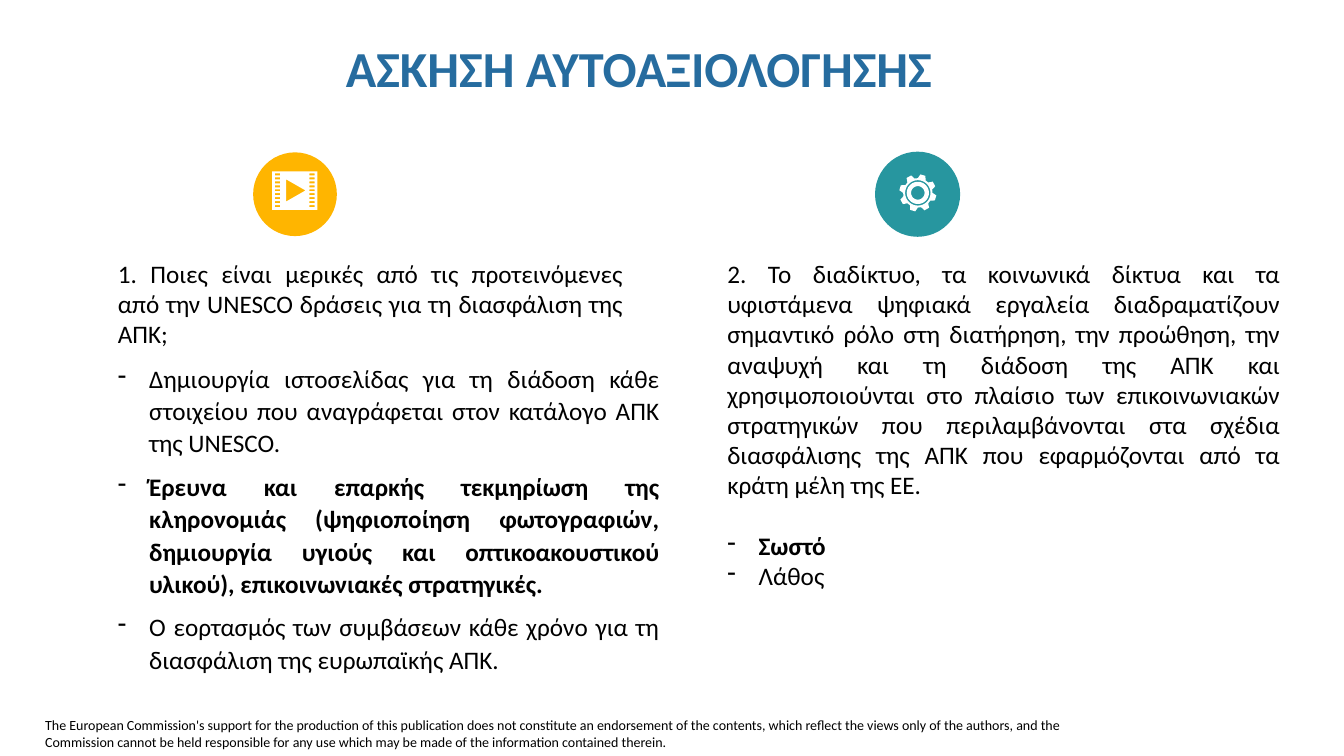
from math import cos, radians, sin

from lxml import etree
from pptx import Presentation
from pptx.dml.color import RGBColor
from pptx.enum.shapes import MSO_SHAPE
from pptx.enum.text import MSO_ANCHOR, MSO_AUTO_SIZE, PP_ALIGN
from pptx.oxml.ns import qn
from pptx.util import Cm, Pt

LEFT, JUSTIFY = PP_ALIGN.LEFT, PP_ALIGN.JUSTIFY
TOP, MIDDLE = MSO_ANCHOR.TOP, MSO_ANCHOR.MIDDLE
NO_FIT, GROW = MSO_AUTO_SIZE.NONE, MSO_AUTO_SIZE.SHAPE_TO_FIT_TEXT
ELLIPSE = MSO_SHAPE.OVAL
FONT = "Calibri"
COLORS = {
    "title": "266C9F",
    "text": "000000",
    "film": "FFB500",
    "gear": "27969F",
    "icon": "FFFFFF",
}
INDENT = 0.79
LEFT_X, RIGHT_X = 2.72, 18.08
QUESTION_Y, ICON_Y, ICON_SIZE = 6.38, 3.84, 2.11


def rgb(name):
    return RGBColor.from_string(COLORS[name])


def add_text(p, text, size=18, color="text", bold=False, align=LEFT,
             bullet=None, spacing=None, after=None):
    if bullet:
        pPr = p._p.get_or_add_pPr()
        pPr.set("marL", str(Cm(INDENT)))
        pPr.set("indent", str(-Cm(INDENT)))
        etree.SubElement(pPr, qn("a:buChar")).set("char", bullet)
    p.alignment = align
    if spacing:
        p.line_spacing = spacing
    if after:
        p.space_after = Pt(after)
    r = p.add_run()
    r.text = text
    r.font.name, r.font.size, r.font.bold = FONT, Pt(size), bold
    r.font.color.rgb = rgb(color)


def box(x, y, w, h):
    return [(x, y), (x + w, y), (x + w, y + h), (x, y + h)]


def polar(cx, cy, radius, angle):
    return cx + radius * cos(radians(angle)), cy + radius * sin(radians(angle))


def ring(cx, cy, radius):
    return [polar(cx, cy, radius, angle) for angle in range(0, 360, 10)]


def film_outlines():
    holes = [box(x, 4.37 + 0.1 * row, 0.13, 0.05)
             for row in range(9) for x in (6.93, 7.8)]
    play = [(7.21, 4.52), (7.21, 5.08), (7.7, 4.8)]
    return [box(6.86, 4.32, 1.14, 0.97), play, *holes]


def gear_outlines(cx=23.13, cy=4.86, teeth=8):
    profile = [(0.37, -16), (0.47, -8), (0.47, 8), (0.37, 16)]
    rim = [polar(cx, cy, radius, tooth * 360 / teeth - 74 + offset)
           for tooth in range(teeth) for radius, offset in profile]
    return [rim, *(ring(cx, cy, radius) for radius in (0.32, 0.28, 0.17))]


class SlideBuilder:
    def __init__(self, prs):
        self.s = prs.slides.add_slide(prs.slide_layouts[5])

    def fill_frame(self, sp, paras, anchor=TOP, fit=NO_FIT, **style):
        tf = sp.text_frame
        tf.word_wrap, tf.auto_size, tf.vertical_anchor = True, fit, anchor
        for i, (text, bold) in enumerate(paras):
            p = tf.add_paragraph() if i else tf.paragraphs[0]
            add_text(p, text, bold=bold, **style)

    def title(self, text, x, y, w, h):
        sp = self.s.shapes.title
        sp.left, sp.top, sp.width, sp.height = Cm(x), Cm(y), Cm(w), Cm(h)
        self.fill_frame(sp, [(text, True)], anchor=MIDDLE,
                        size=36, color="title", spacing=0.9)

    def text(self, paras, x, y, w, h, **style):
        sp = self.s.shapes.add_textbox(Cm(x), Cm(y), Cm(w), Cm(h))
        self.fill_frame(sp, paras, **style)

    def paint(self, sp, color):
        sp.shadow.inherit = False
        sp.fill.solid()
        sp.fill.fore_color.rgb = rgb(color)
        sp.line.fill.background()

    def disc(self, x, color):
        sp = self.s.shapes.add_shape(
            ELLIPSE, Cm(x), Cm(ICON_Y), Cm(ICON_SIZE), Cm(ICON_SIZE))
        self.paint(sp, color)
        return sp

    def icon(self, outlines):
        paths = [[(Cm(x), Cm(y)) for x, y in points] for points in outlines]
        builder = self.s.shapes.build_freeform(*paths[0][0])
        for i, points in enumerate(paths):
            if i:
                builder.move_to(*points[0])
            builder.add_line_segments(points[1:], close=True)
        self.paint(builder.convert_to_shape(), "icon")


def main():
    prs = Presentation()
    prs.slide_width, prs.slide_height = Cm(33.87), Cm(19.05)
    slide = SlideBuilder(prs)

    slide.title("ΑΣΚΗΣΗ ΑΥΤΟΑΞΙΟΛΟΓΗΣΗΣ", 8.46, 0.79, 24.05, 2.01)
    slide.text([(
        "The European Commission's support for the production of this "
        "publication does not constitute an endorsement of the contents, "
        "which reflect the views only of the authors, and the Commission "
        "cannot be held responsible for any use which may be made of the "
        "information contained therein.", False)],
        0.89, 17.93, 26.57, 1.12, fit=GROW, size=10)

    slide.text([(
        "1. Ποιες είναι μερικές από τις προτεινόμενες από την UNESCO "
        "δράσεις για τη διασφάλιση της ΑΠΚ;", False)],
        LEFT_X, QUESTION_Y, 13.23, 1.32, align=JUSTIFY)
    slide.text([
        ("Δημιουργία ιστοσελίδας για τη διάδοση κάθε στοιχείου που "
         "αναγράφεται στον κατάλογο ΑΠΚ της UNESCO.", False),
        ("Έρευνα και επαρκής τεκμηρίωση της κληρονομιάς (ψηφιοποίηση "
         "φωτογραφιών, δημιουργία υγιούς και οπτικοακουστικού υλικού), "
         "επικοινωνιακές στρατηγικές.", True),
        ("Ο εορτασμός των συμβάσεων κάθε χρόνο για τη διασφάλιση της "
         "ευρωπαϊκής ΑΠΚ.", False)],
        LEFT_X, 8.97, 14.15, 2.31,
        align=JUSTIFY, bullet="-", spacing=1.07, after=8)

    slide.text([(
        "2. Το διαδίκτυο, τα κοινωνικά δίκτυα και τα υφιστάμενα ψηφιακά "
        "εργαλεία διαδραματίζουν σημαντικό ρόλο στη διατήρηση, την προώθηση, "
        "την αναψυχή και τη διάδοση της ΑΠΚ και χρησιμοποιούνται στο πλαίσιο "
        "των επικοινωνιακών στρατηγικών που περιλαμβάνονται στα σχέδια "
        "διασφάλισης της ΑΠΚ που εφαρμόζονται από τα κράτη μέλη της ΕΕ.",
        False)],
        RIGHT_X, QUESTION_Y, 14.43, 1.35, align=JUSTIFY)
    slide.text([("Σωστό", True), ("Λάθος", False)],
               RIGHT_X, 13.23, 6.1, 2.31, align=JUSTIFY, bullet="-")

    slide.disc(6.38, "film")
    slide.icon(film_outlines())
    gear_disc = slide.disc(22.07, "gear")
    gear_disc.line.color.rgb = rgb("gear")
    gear_disc.line.width = Pt(1)
    slide.icon(gear_outlines())

    prs.save("out.pptx")


if __name__ == "__main__":
    main()
